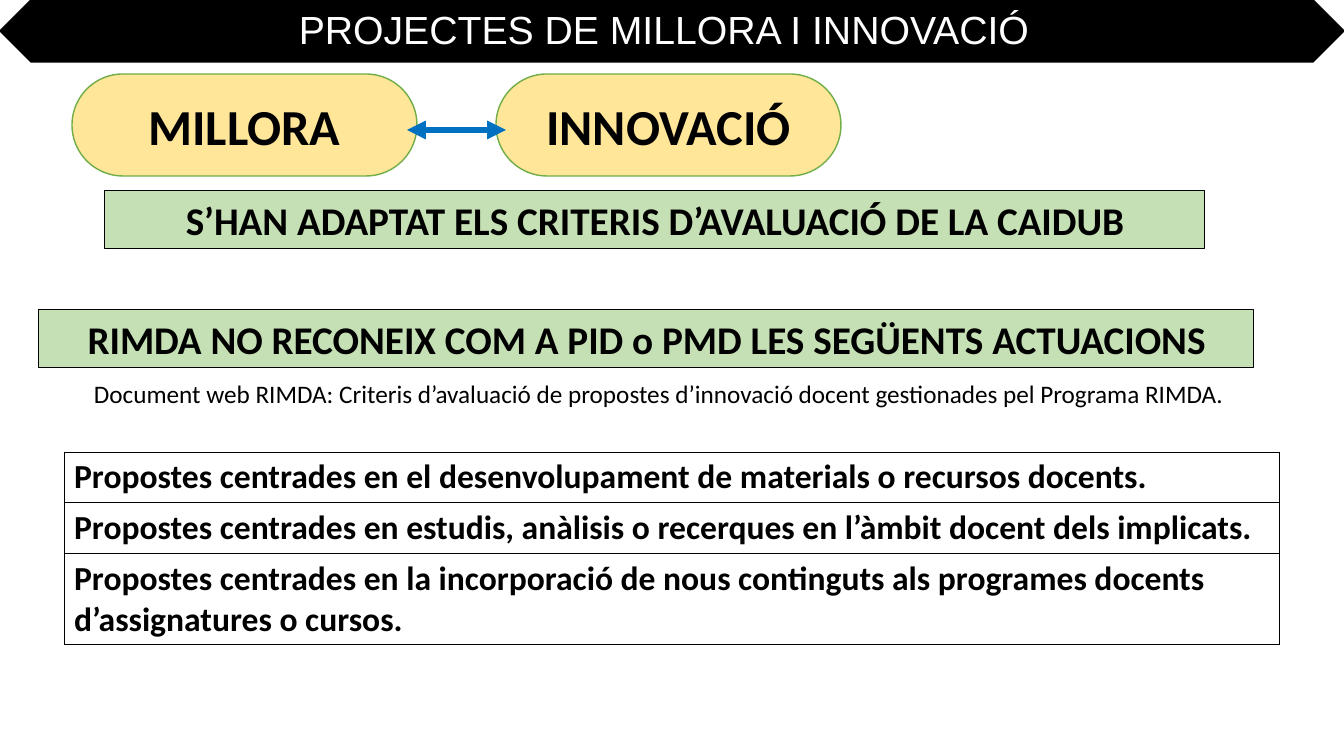
from lxml import etree
from pptx import Presentation
from pptx import util as u
from pptx.dml.color import RGBColor
from pptx.enum import shapes, text
from pptx.oxml import ns

COLOURS = {"black": "000000", "white": "FFFFFF", "yellow": "FFE699",
           "leaf": "70AD47", "pale": "C5E0B4", "blue": "0070C0"}
SCALE = 914400 / 100.8
PROPOSALS = [
    "Propostes centrades en el desenvolupament de materials o recursos docents.",
    "Propostes centrades en estudis, anàlisis o recerques en l’àmbit docent dels implicats.",
    "Propostes centrades en la incorporació de nous continguts als programes docents "
    "d’assignatures o cursos.",
]


def px(*lengths):
    return [u.Emu(round(length * SCALE)) for length in lengths]


def colour(name):
    return RGBColor.from_string(COLOURS[name])


class Page:
    """Draws styled elements on one slide."""

    def __init__(self, deck):
        self.shapes = deck.slides.add_slide(deck.slide_layouts[6]).shapes

    def set_words(self, frame, words, size, bold=False, ink="black", font="Calibri",
                  align=text.PP_ALIGN.LEFT):
        frame.text = words
        frame.word_wrap = True
        para = frame.paragraphs[0]
        para.alignment = align
        for span in para.runs:
            span.font.name = font
            span.font.size = u.Pt(size)
            span.font.bold = bold
            span.font.color.rgb = colour(ink)

    def shape(self, kind, place, fill, line, width, words="", size=28, corners=()):
        box = self.shapes.add_shape(kind, *px(*place))
        box.shadow.inherit = False
        box.fill.solid()
        box.fill.fore_color.rgb = colour(fill)
        box.line.color.rgb = colour(line)
        box.line.width = u.Pt(width)
        for index, corner in enumerate(corners):
            box.adjustments[index] = corner
        if words:
            self.set_words(box.text_frame, words, size, bold=True, align=text.PP_ALIGN.CENTER)
            box.text_frame.vertical_anchor = text.MSO_ANCHOR.MIDDLE

    def label(self, place, words, size, **style):
        box = self.shapes.add_textbox(*px(*place))
        self.set_words(box.text_frame, words, size, **style)

    def double_arrow(self, start, end, ink, width):
        arrow = self.shapes.add_connector(shapes.MSO_CONNECTOR.STRAIGHT, *px(*start, *end))
        arrow.line.color.rgb = colour(ink)
        arrow.line.width = u.Pt(width)
        properties = arrow._element.spPr
        outline = properties.find(ns.qn("a:ln"))
        for tip in ("a:headEnd", "a:tailEnd"):
            etree.SubElement(outline, ns.qn(tip), type="triangle")
        etree.SubElement(properties, ns.qn("a:effectLst"))

    def border(self, cell, ink, width):
        properties = cell._tc.get_or_add_tcPr()
        for index, side in enumerate(("a:lnL", "a:lnR", "a:lnT", "a:lnB")):
            edge = etree.Element(ns.qn(side), w=str(int(u.Pt(width))))
            fill = etree.SubElement(edge, ns.qn("a:solidFill"))
            etree.SubElement(fill, ns.qn("a:srgbClr"), val=COLOURS[ink])
            properties.insert(index, edge)

    def table(self, place, heights, rows):
        grid = self.shapes.add_table(len(rows), 1, *px(*place)).table
        grid.first_row = grid.horz_banding = False
        for index, (height, words) in enumerate(zip(px(*heights), rows)):
            grid.rows[index].height = height
            cell = grid.cell(index, 0)
            cell.fill.solid()
            cell.fill.fore_color.rgb = colour("white")
            self.set_words(cell.text_frame, words, 24, bold=True)
            self.border(cell, "black", 0.6)


def main():
    deck = Presentation()
    deck.slide_width, deck.slide_height = px(1344, 756)
    page = Page(deck)
    kinds = shapes.MSO_SHAPE
    page.shape(kinds.SNIP_2_DIAG_RECTANGLE, (0, 0, 1344, 62), "black", "black", 1,
               corners=(0.5, 0.5))
    page.label((289, 0, 766, 62), "PROJECTES DE MILLORA I INNOVACIÓ", 28,
               ink="white", font="Arial")
    for left, words in ((72, "MILLORA"), (496, "INNOVACIÓ")):
        page.shape(kinds.ROUNDED_RECTANGLE, (left, 74, 345, 102), "yellow", "leaf", 1,
                   words, 36, corners=(0.5,))
    page.double_arrow((407, 130), (506, 130), "blue", 4.5)
    for place, words in (
        ((105, 191, 1100, 58), "S’HAN ADAPTAT ELS CRITERIS D’AVALUACIÓ DE LA CAIDUB"),
        ((39, 310, 1215, 58), "RIMDA NO RECONEIX COM A PID o PMD LES SEGÜENTS ACTUACIONS"),
    ):
        page.shape(kinds.RECTANGLE, place, "pale", "black", 0.75, words)
    page.table((64, 452, 1215, 192), (50, 51, 91), PROPOSALS)
    page.label((84, 373, 1169, 40), "Document web RIMDA: Criteris d’avaluació de propostes "
               "d’innovació docent gestionades pel Programa RIMDA.", 18)
    deck.save("out.pptx")


if __name__ == "__main__":
    main()
